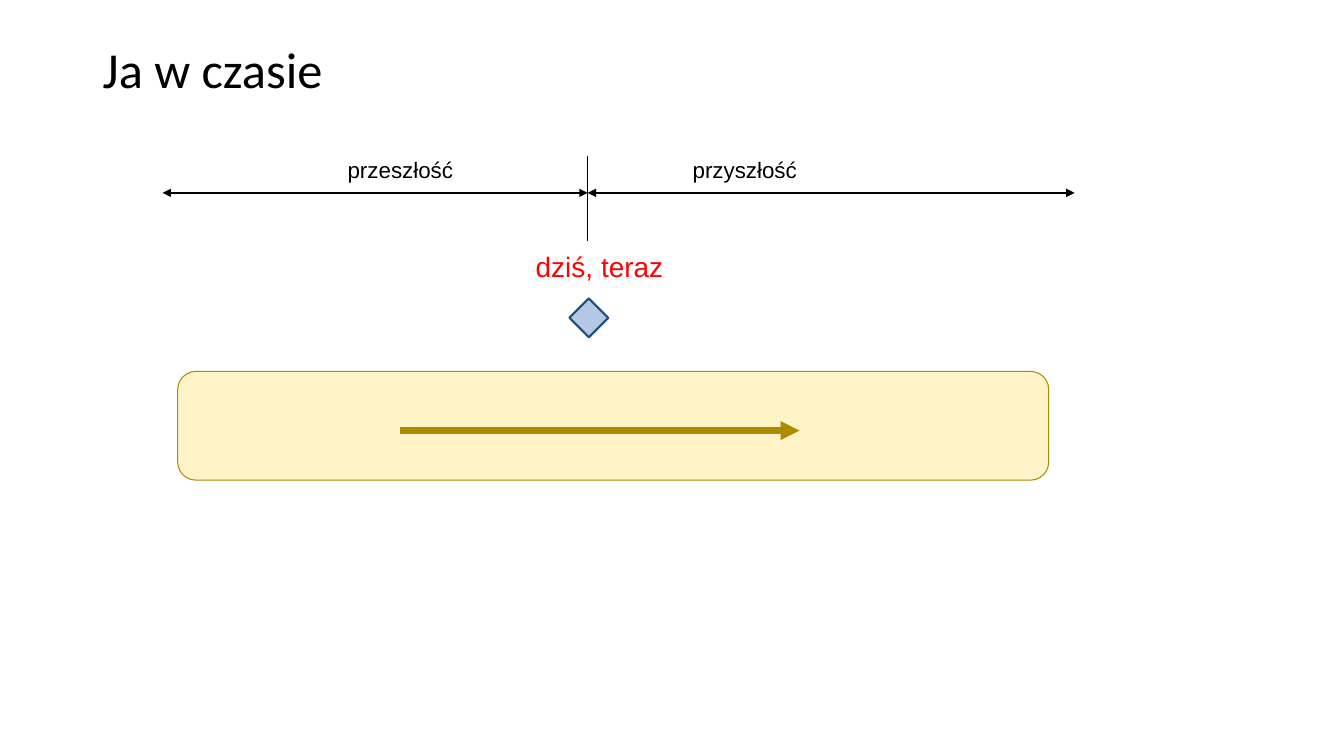
from dataclasses import dataclass

from lxml import etree
from pptx import Presentation
from pptx.dml.color import RGBColor
from pptx.enum.shapes import MSO_CONNECTOR, MSO_SHAPE
from pptx.enum.text import MSO_ANCHOR, PP_ALIGN
from pptx.oxml.ns import qn
from pptx.util import Cm, Pt


@dataclass(frozen=True)
class Theme:
    heading_font: str = "Calibri"
    label_font: str = "Arial"
    heading_size: int = 36
    label_size: int = 16
    now_size: int = 20
    ink: str = "000000"
    now: str = "FF0000"
    band: str = "FFF4C7"
    gold: str = "AD8B00"
    marker: str = "B4C7E7"
    marker_edge: str = "1F4E79"


class TimelineSlide:
    def __init__(self, slide, theme):
        self.shapes = slide.shapes
        self.theme = theme

    def text(self, words, left, top, width, height, size, color, font,
             align=PP_ALIGN.CENTER, anchor=MSO_ANCHOR.MIDDLE, inset=0.08):
        frame = self.shapes.add_textbox(Cm(left), Cm(top), Cm(width), Cm(height)).text_frame
        frame.word_wrap = True
        frame.vertical_anchor = anchor
        frame.margin_left = frame.margin_right = Cm(inset)
        frame.margin_top = frame.margin_bottom = Cm(inset / 2 if inset > 0.2 else inset)
        paragraph = frame.paragraphs[0]
        paragraph.text = words
        paragraph.alignment = align
        paragraph.font.name = font
        paragraph.font.size = Pt(size)
        paragraph.font.color.rgb = RGBColor.from_string(color)
        return paragraph

    def heading(self, words):
        theme = self.theme
        paragraph = self.text(words, 2.34, 1.02, 29.21, 3.28, theme.heading_size, theme.ink,
                              theme.heading_font, PP_ALIGN.LEFT, MSO_ANCHOR.TOP, 0.25)
        paragraph.line_spacing = 0.9

    def label(self, words, center, middle, size, color):
        width, height = 3.66, 0.9
        self.text(words, center - width / 2, middle - height / 2, width, height,
                  size, color, self.theme.label_font)

    def shape(self, preset, left, top, width, height, fill, edge, weight):
        shape = self.shapes.add_shape(preset, Cm(left), Cm(top), Cm(width), Cm(height))
        shape.shadow.inherit = False
        shape.fill.solid()
        shape.fill.fore_color.rgb = RGBColor.from_string(fill)
        shape.line.color.rgb = RGBColor.from_string(edge)
        shape.line.width = Pt(weight)

    def line(self, start, end, color, weight, arrows=()):
        """Draw a straight line; arrows lists the pointed ends, headEnd (start) before tailEnd."""
        line = self.shapes.add_connector(MSO_CONNECTOR.STRAIGHT, *map(Cm, start + end))
        line.line.color.rgb = RGBColor.from_string(color)
        line.line.width = Pt(weight)
        outline = line.line._get_or_add_ln()
        for arrow in arrows:
            etree.SubElement(outline, qn(f"a:{arrow}")).set("type", "triangle")
        etree.SubElement(line._element.spPr, qn("a:effectLst"))


def main():
    presentation = Presentation()
    presentation.slide_width, presentation.slide_height = Cm(33.87), Cm(19.05)
    theme = Theme()
    slide = TimelineSlide(presentation.slides.add_slide(presentation.slide_layouts[6]), theme)

    past, today, future = 4.1, 14.81, 27.08
    axis = 4.86
    slide.heading("Ja w czasie")

    slide.shape(MSO_SHAPE.ROUNDED_RECTANGLE, 4.48, 9.36, 21.95, 2.74,
                theme.band, theme.gold, 0.75)
    slide.line((10.08, 10.85), (20.15, 10.85), theme.gold, 4.5, ["tailEnd"])

    periods = [("przeszłość", past, today, 10.09), ("przyszłość", today, future, 18.77)]
    for period, start, end, center in periods:
        slide.line((start, axis), (end, axis), theme.ink, 1.5, ["headEnd", "tailEnd"])
        slide.label(period, center, 4.28, theme.label_size, theme.ink)

    slide.line((today, 3.92), (today, 6.08), theme.ink, 0.5)
    slide.shape(MSO_SHAPE.DIAMOND, 14.35, 7.52, 0.98, 0.98,
                theme.marker, theme.marker_edge, 1.5)
    slide.label("dziś, teraz", 15.11, 6.71, theme.now_size, theme.now)
    presentation.save("out.pptx")


if __name__ == "__main__":
    main()
